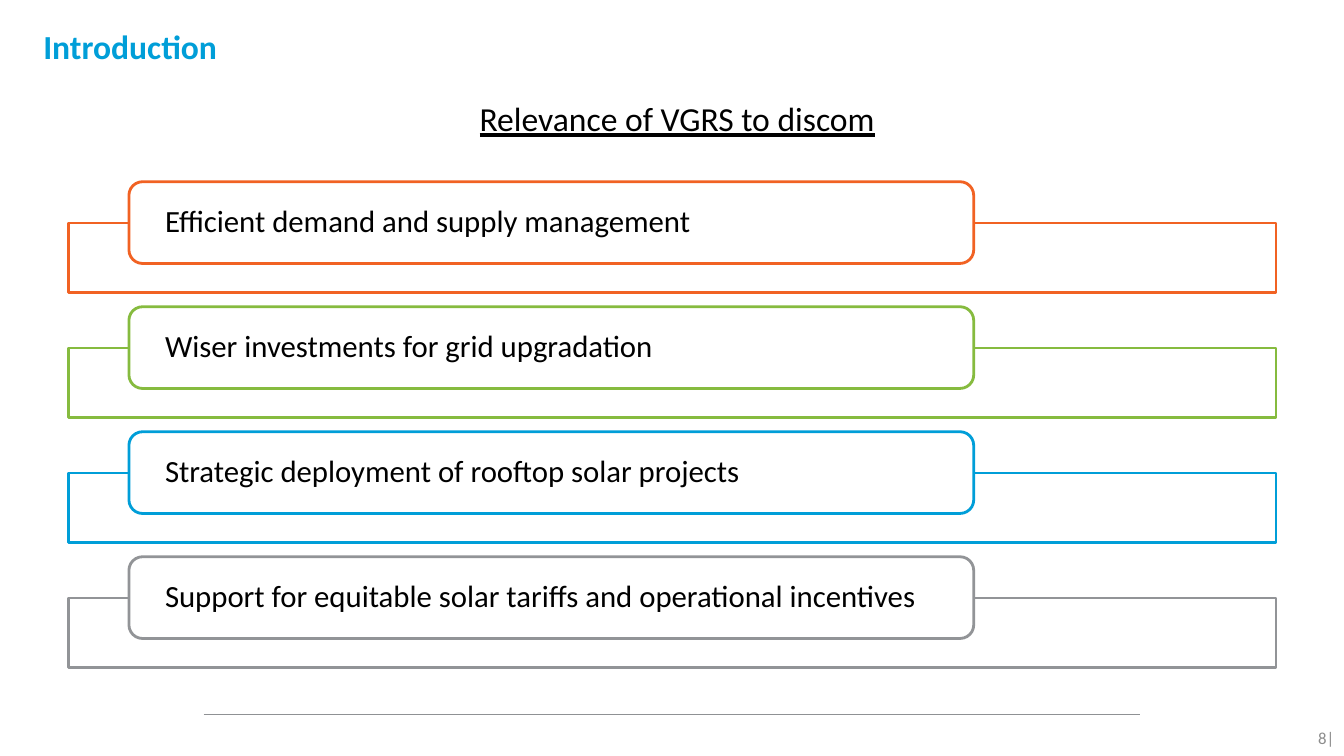
from dataclasses import dataclass

import pptx
import pptx.dml.color
import pptx.enum.shapes
import pptx.enum.text
import pptx.oxml
import pptx.util
from pptx.util import Cm


@dataclass(frozen=True)
class Theme:
    font: str = "Calibri"
    orange: str = "F16223"
    green: str = "86BB3F"
    blue: str = "009ED8"
    grey: str = "929497"
    rule: str = "8F9194"
    page: str = "8C8C8C"
    black: str = "000000"
    white: str = "FFFFFF"
    heading_size: int = 24
    reason_size: int = 22
    page_size: int = 12


THEME = Theme()
ALIGN = pptx.enum.text.PP_ALIGN
ANCHOR = pptx.enum.text.MSO_ANCHOR
SHAPES = pptx.enum.shapes.MSO_SHAPE


def write(shape, text, size, color, align=ALIGN.LEFT, anchor=ANCHOR.TOP, side=0.25, edge=0.13):
    """Fill a shape with one styled paragraph; side and edge are insets in cm."""
    frame = shape.text_frame
    frame.word_wrap = True
    frame.auto_size = pptx.enum.text.MSO_AUTO_SIZE.NONE
    frame.vertical_anchor = anchor
    frame.margin_left = frame.margin_right = Cm(side)
    frame.margin_top = frame.margin_bottom = Cm(edge)
    paragraph = frame.paragraphs[0]
    paragraph.text = text
    paragraph.alignment = align
    paragraph.font.name = THEME.font
    paragraph.font.size = pptx.util.Pt(size)
    paragraph.font.color.rgb = pptx.dml.color.RGBColor.from_string(color)
    return paragraph


def outlined(kind, left, top, width, height, color):
    """Add a white shape with a coloured outline, measured in cm."""
    shape = slide.shapes.add_shape(kind, Cm(left), Cm(top), Cm(width), Cm(height))
    shape.shadow.inherit = False
    shape.fill.solid()
    shape.fill.fore_color.rgb = pptx.dml.color.RGBColor.from_string(THEME.white)
    shape.line.color.rgb = pptx.dml.color.RGBColor.from_string(color)
    shape.line.width = pptx.util.Pt(2)
    return shape


deck = pptx.Presentation()
deck.slide_width, deck.slide_height = Cm(33.87), Cm(19.05)
slide = deck.slides.add_slide(deck.slide_layouts[5])

footer_rule = slide.shapes.add_connector(
    pptx.enum.shapes.MSO_CONNECTOR.STRAIGHT, Cm(5.13), Cm(18.01), Cm(28.73), Cm(18.01))
footer_rule.line.color.rgb = pptx.dml.color.RGBColor.from_string(THEME.rule)
footer_rule.line.width = pptx.util.Pt(0.75)
footer_rule._element.spPr.append(pptx.oxml.parse_xml(
    '<a:effectLst xmlns:a="http://schemas.openxmlformats.org/drawingml/2006/main"/>'))

page_number = slide.shapes.add_textbox(Cm(31.72), Cm(18.08), Cm(2.16), Cm(1.02))
write(page_number, "8|", THEME.page_size, THEME.page, ALIGN.RIGHT, ANCHOR.MIDDLE)

title = slide.shapes.title
title.left, title.top, title.width, title.height = Cm(1.09), Cm(0.53), Cm(31.34), Cm(2.21)
write(title, "Introduction", THEME.heading_size, THEME.blue, side=0).font.bold = True

subtitle = slide.shapes.add_textbox(Cm(1.09), Cm(2.34), Cm(31.95), Cm(1.9))
write(subtitle, "Relevance of VGRS to discom", THEME.heading_size, THEME.black,
      ALIGN.CENTER).font.underline = True

reasons = [
    ("Efficient demand and supply management", THEME.orange),
    ("Wiser investments for grid upgradation", THEME.green),
    ("Strategic deployment of rooftop solar projects", THEME.blue),
    ("Support for equitable solar tariffs and operational incentives", THEME.grey),
]
FIRST_TOP, PITCH, FRAME_DROP = 4.58, 3.15, 1.04
for row, (reason, color) in enumerate(reasons):
    top = FIRST_TOP + row * PITCH
    outlined(SHAPES.RECTANGLE, 1.73, top + FRAME_DROP, 30.43, 1.75, color)
    label = outlined(SHAPES.ROUNDED_RECTANGLE, 3.25, top, 21.29, 2.06, color)
    paragraph = write(label, reason, THEME.reason_size, THEME.black,
                      anchor=ANCHOR.MIDDLE, side=0.81, edge=0)
    paragraph.line_spacing = 0.9

deck.save("out.pptx")
